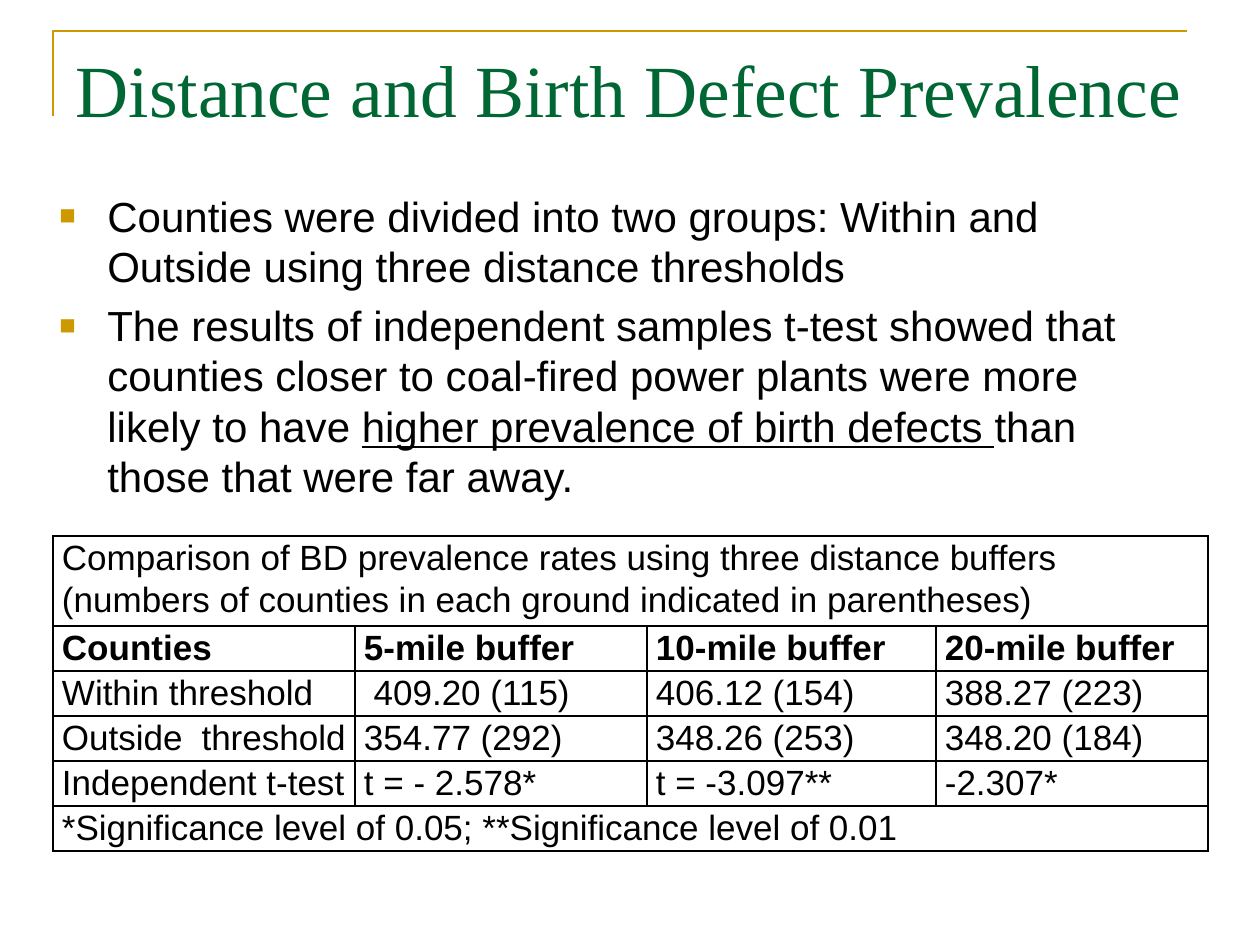
import pptx
import pptx.util
import pptx.dml.color
import pptx.enum.text
import pptx.enum.shapes
import lxml.etree
from pptx.oxml.ns import qn

GOLD, GREEN, BLACK = "CC9900", "006633", "000000"
TITLE = "Distance and Birth Defect Prevalence"
# Each bullet is a list of (text, underlined)
BULLETS = [
    [("Counties were divided into two groups: Within and Outside using three "
      "distance thresholds", False)],
    [("The results of independent samples t-test showed that counties closer to "
      "coal-fired power plants were more likely to have ", False),
     ("higher prevalence of birth defects ", True),
     ("than those that were far away.", False)],
]
# A row with one text spans the whole table
ROWS = [
    ["Comparison of BD prevalence rates using three distance buffers "
     "(numbers of counties in each ground indicated in parentheses)"],
    ["Counties ", "5-mile buffer", "10-mile buffer", "20-mile buffer"],
    ["Within threshold ", " 409.20 (115)", "406.12 (154)", "388.27 (223)"],
    ["Outside threshold ", "354.77 (292)", "348.26 (253)", "348.20 (184)"],
    ["Independent t-test", "t = - 2.578*", "t = -3.097**", "-2.307*"],
    ["*Significance level of 0.05; **Significance level of 0.01 "],
]
HEADER_ROW = 1
COL_WIDTHS = [302, 292, 289, 272]
ROW_HEIGHTS = [83] + [42] * 5


def px(n):
    return pptx.util.Emu(round(n * 914400 / 126))


def rgb(color):
    return pptx.dml.color.RGBColor.from_string(color)


def style(r, size, color=BLACK, font="Arial", bold=False, underline=False):
    r.font.size = pptx.util.Pt(size)
    r.font.name = font
    r.font.color.rgb = rgb(color)
    r.font.bold = bold
    r.font.underline = underline


def gold_line(sp):
    sp.line.color.rgb = rgb(GOLD)
    sp.line.width = pptx.util.Pt(1.5)


def add_bullet(p):
    pPr = p._p.get_or_add_pPr()
    pPr.set("marL", str(px(48)))
    pPr.set("indent", str(-px(48)))
    color = lxml.etree.SubElement(pPr, qn("a:buClr"))
    lxml.etree.SubElement(color, qn("a:srgbClr"), val=GOLD)
    lxml.etree.SubElement(pPr, qn("a:buSzPct"), val="65000")
    lxml.etree.SubElement(pPr, qn("a:buFont"), typeface="Arial")
    lxml.etree.SubElement(pPr, qn("a:buChar"), char="■")


def add_borders(cell):
    tcPr = cell._tc.get_or_add_tcPr()
    for i, side in enumerate(("lnL", "lnR", "lnT", "lnB")):
        ln = lxml.etree.Element(qn("a:" + side), w="12700")
        fill = lxml.etree.SubElement(ln, qn("a:solidFill"))
        lxml.etree.SubElement(fill, qn("a:srgbClr"), val=BLACK)
        tcPr.insert(i, ln)


prs = pptx.Presentation()
prs.slide_width, prs.slide_height = px(1260), px(945)
s = prs.slides.add_slide(prs.slide_layouts[5])

# Corner rule and bottom rule
builder = s.shapes.build_freeform(px(53), px(116))
builder.add_line_segments([(px(53), px(31)), (px(1187), px(31))], close=False)
corner = builder.convert_to_shape()
corner.shadow.inherit = False
corner.fill.background()
gold_line(corner)
rule = s.shapes.add_connector(pptx.enum.shapes.MSO_CONNECTOR.STRAIGHT,
                              px(63), px(851), px(1197), px(851))
gold_line(rule)
lxml.etree.SubElement(rule._element.spPr, qn("a:effectLst"))

# Title
title = s.shapes.title
title.left, title.top, title.width, title.height = px(63), px(38), px(1134), px(157)
tf = title.text_frame
tf.text = TITLE
tf.vertical_anchor = pptx.enum.text.MSO_ANCHOR.TOP
tf.auto_size = pptx.enum.text.MSO_AUTO_SIZE.NONE
tf.paragraphs[0].alignment = pptx.enum.text.PP_ALIGN.LEFT
style(tf.paragraphs[0].runs[0], 42, GREEN, "Times New Roman")

# Bullets
tf = s.shapes.add_textbox(px(47), px(184), px(1134), px(349)).text_frame
tf.word_wrap = True
for i, parts in enumerate(BULLETS):
    p = tf.add_paragraph() if i else tf.paragraphs[0]
    p.space_before = pptx.util.Pt(4.8)
    add_bullet(p)
    for text, underline in parts:
        r = p.add_run()
        r.text = text
        style(r, 24, underline=underline)

# Table
table = s.shapes.add_table(len(ROWS), len(COL_WIDTHS), px(53), px(536),
                           px(sum(COL_WIDTHS)), px(sum(ROW_HEIGHTS))).table
for column, width in zip(table.columns, COL_WIDTHS):
    column.width = px(width)
for i, (texts, height) in enumerate(zip(ROWS, ROW_HEIGHTS)):
    table.rows[i].height = px(height)
    spanning = len(texts) == 1
    if spanning:
        table.cell(i, 0).merge(table.cell(i, len(COL_WIDTHS) - 1))
    for cell in table.rows[i].cells:
        cell.fill.background()
        add_borders(cell)
        cell.margin_left = cell.margin_right = px(9)
        cell.margin_top = cell.margin_bottom = 0
    for j, text in enumerate(texts):
        p = table.cell(i, j).text_frame.paragraphs[0]
        p.text = text
        p.line_spacing = 1.07
        if not spanning:
            p.alignment = pptx.enum.text.PP_ALIGN.JUSTIFY
        style(p.runs[0], 20, bold=i == HEADER_ROW)

prs.save("out.pptx")
